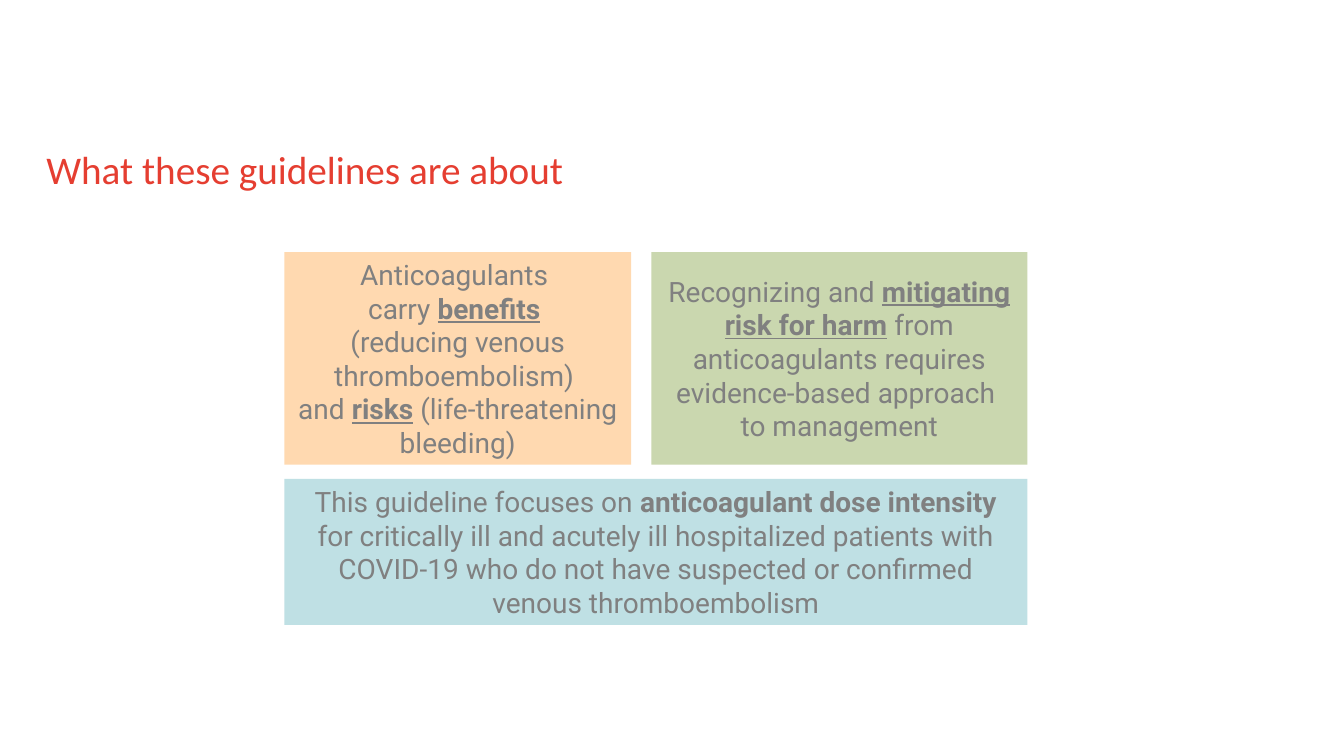
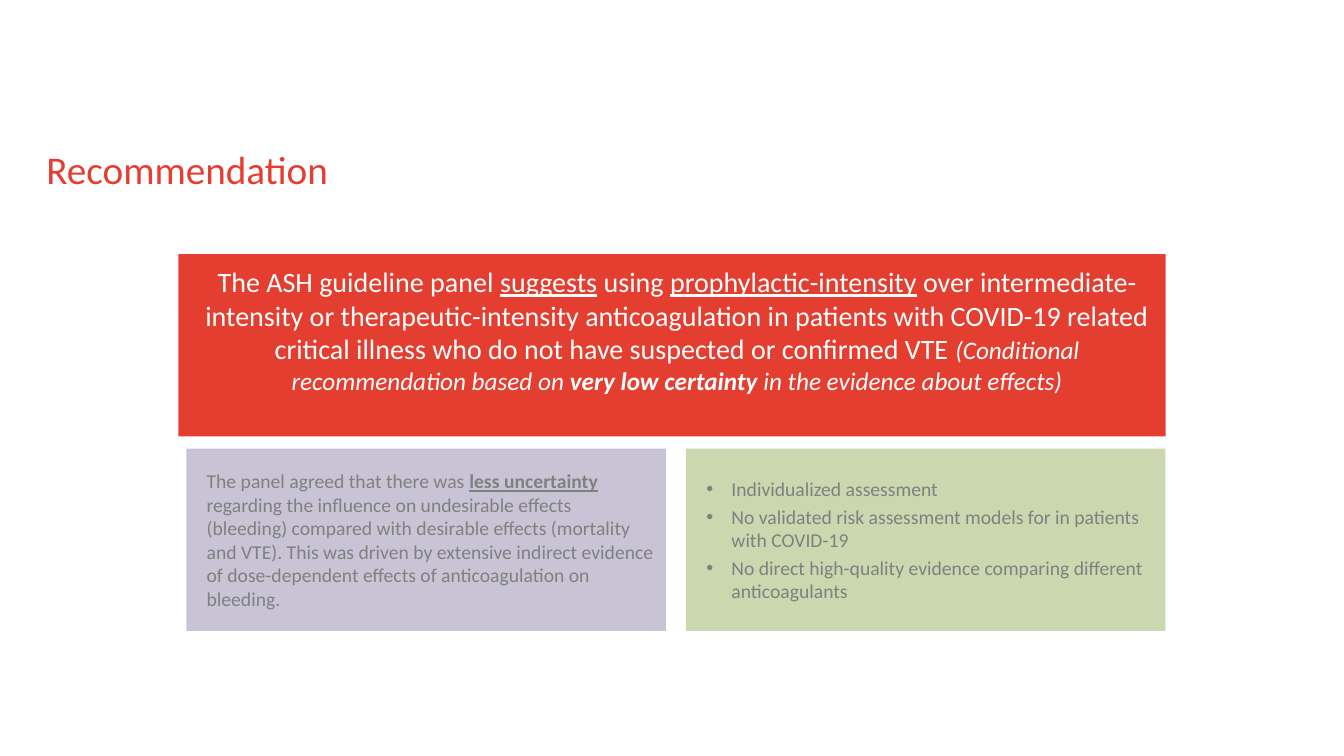
from lxml.etree import SubElement
from pptx import Presentation
from pptx.dml.color import RGBColor
from pptx.enum.shapes import MSO_SHAPE as Shape
from pptx.enum.text import MSO_ANCHOR as Anchor, MSO_AUTO_SIZE as AutoSize, PP_ALIGN as Align
from pptx.oxml.ns import qn
from pptx.util import Inches, Pt

# Shared look
RED, GREY, WHITE = "E53E31", "808080", "FFFFFF"
ORANGE, GREEN, TEAL, LILAC = "FFD9B0", "CAD7AF", "BFE0E4", "C8C3D5"
TITLE_BOX = (0.46, 1.47, 12, 0.46)
NARROW, ROOMY = (0.1, 0.05, 0.1, 0.05), (0.2, 0.1, 0.1, 0.1)

# Content: a paragraph is a list of (text, marks); marks are b, i, u
ABOUT_TITLE = "What these guidelines are about"
BENEFITS = [[
    ("Anticoagulants \ncarry ", ""), ("benefits", "bu"),
    (" \n(reducing venous thromboembolism) \nand ", ""), ("risks", "bu"),
    (" (life-threatening bleeding)", "")]]
MITIGATION = [[
    ("Recognizing and ", ""), ("mitigating risk for harm", "bu"),
    (" from anticoagulants requires evidence-based approach \nto management", "")]]
FOCUS = [[
    ("This guideline focuses on ", ""), ("anticoagulant dose intensity", "b"),
    (" for critically ill and acutely ill hospitalized patients with COVID-19 "
     "who do not have suspected or confirmed venous thromboembolism", "")]]

RECOMMENDATION_TITLE = "Recommendation"
RECOMMENDATION = [[
    ("The ASH guideline panel ", ""), ("suggests", "u"), (" using ", ""),
    ("prophylactic-intensity", "u"),
    (" over intermediate-intensity or therapeutic-intensity anticoagulation in patients "
     "with COVID-19 related critical illness who do not have suspected or confirmed VTE ", ""),
    ("(Conditional recommendation based on ", "i"), ("very low certainty ", "bi"),
    ("in the evidence about effects)", "i")]]
UNCERTAINTY = [[
    ("The panel agreed that there was ", ""), ("less uncertainty ", "bu"),
    ("regarding the influence on undesirable effects (bleeding) compared with desirable "
     "effects (mortality and VTE). This was driven by extensive indirect evidence of "
     "dose-dependent effects of anticoagulation on bleeding.", "")]]
REMARKS = [[(remark, "")] for remark in (
    "Individualized assessment",
    "No validated risk assessment models for in patients with COVID-19",
    "No direct high-quality evidence comparing different anticoagulants")]


def colour(value):
    return RGBColor.from_string(value)


def set_bullet(paragraph, bullet):
    props = paragraph._p.get_or_add_pPr()
    indent = Inches(0.25) if bullet else 0
    props.set("marL", str(indent))
    props.set("indent", str(-indent))
    if bullet:
        SubElement(props, qn("a:buFont"), typeface="Arial")
        SubElement(props, qn("a:buChar"), char=bullet)
    else:
        SubElement(props, qn("a:buNone"))


def write(shape, paragraphs, size=20, font="Calibri", ink=GREY, align=Align.LEFT,
          insets=NARROW, bullet=None, gap=0, spacing=1.0, italic_size=18):
    frame = shape.text_frame
    frame.word_wrap, frame.auto_size = True, AutoSize.NONE
    frame.vertical_anchor = Anchor.MIDDLE
    (frame.margin_left, frame.margin_top,
     frame.margin_right, frame.margin_bottom) = map(Inches, insets)
    for number, runs in enumerate(paragraphs):
        paragraph = frame.add_paragraph() if number else frame.paragraphs[0]
        set_bullet(paragraph, bullet)
        paragraph.alignment, paragraph.line_spacing = align, spacing
        paragraph.space_before = Pt(gap if number else 0)
        for text, marks in runs:
            for part, line in enumerate(text.split("\n")):
                if part:
                    paragraph.add_line_break()
                run = paragraph.add_run()
                run.text = line
                run.font.name, run.font.color.rgb = font, colour(ink)
                run.font.size = Pt(italic_size if "i" in marks else size)
                run.font.bold, run.font.italic = "b" in marks, "i" in marks
                run.font.underline = "u" in marks


def place(shape, box):
    shape.left, shape.top, shape.width, shape.height = map(Inches, box)


def paint(shape, fill):
    shape.fill.solid()
    shape.fill.fore_color.rgb = colour(fill)
    shape.line.fill.background()


def add_slide(deck, layout, title):
    slide = deck.slides.add_slide(deck.slide_layouts[layout])
    place(slide.shapes.title, TITLE_BOX)
    write(slide.shapes.title, [[(title, "")]], size=28, ink=RED,
          insets=(0, 0, 0, 0), spacing=0.9)
    return slide


def add_panel(slide, box, fill, paragraphs, **text_format):
    panel = slide.shapes.add_shape(Shape.RECTANGLE, *map(Inches, box))
    panel.shadow.inherit = False
    paint(panel, fill)
    write(panel, paragraphs, **text_format)


def build_about(deck):
    slide = add_slide(deck, 5, ABOUT_TITLE)
    left, top, width, height = 2.82, 2.5, 7.37, 2.11
    benefits_width, gutter = 3.44, 0.2
    right = left + benefits_width + gutter
    panels = [
        ((left, top, benefits_width, height), ORANGE, BENEFITS),
        ((right, top, left + width - right, height), GREEN, MITIGATION),
        ((left, top + height + 0.14, width, 1.45), TEAL, FOCUS)]
    for box, fill, paragraphs in panels:
        add_panel(slide, box, fill, paragraphs, font="Roboto", align=Align.CENTER)


def build_recommendation(deck):
    slide = add_slide(deck, 1, RECOMMENDATION_TITLE)
    left, top, width, height = 1.77, 2.52, 9.79, 1.81
    # Main statement, set a little above the middle of its band
    statement = slide.placeholders[1]
    place(statement, (left, top, width, height))
    paint(statement, "E43E31")
    write(statement, RECOMMENDATION, ink=WHITE, align=Align.CENTER,
          insets=(0.2, 0.1, 0.1, 0.4))
    # Two supporting panels, flush with the right edge of the statement
    gutter, inset = 0.2, 0.08
    panel_width = (width - inset - gutter) / 2
    for column, (fill, paragraphs, bullet) in enumerate(
            [(LILAC, UNCERTAINTY, None), (GREEN, REMARKS, "•")]):
        x = left + inset + column * (panel_width + gutter)
        add_panel(slide, (x, top + height + 0.12, panel_width, height), fill, paragraphs,
                  size=14, insets=ROOMY, bullet=bullet, gap=3)


def main():
    deck = Presentation()
    deck.slide_width, deck.slide_height = Inches(13.33), Inches(7.5)
    build_about(deck)
    build_recommendation(deck)
    deck.save("out.pptx")


if __name__ == "__main__":
    main()
